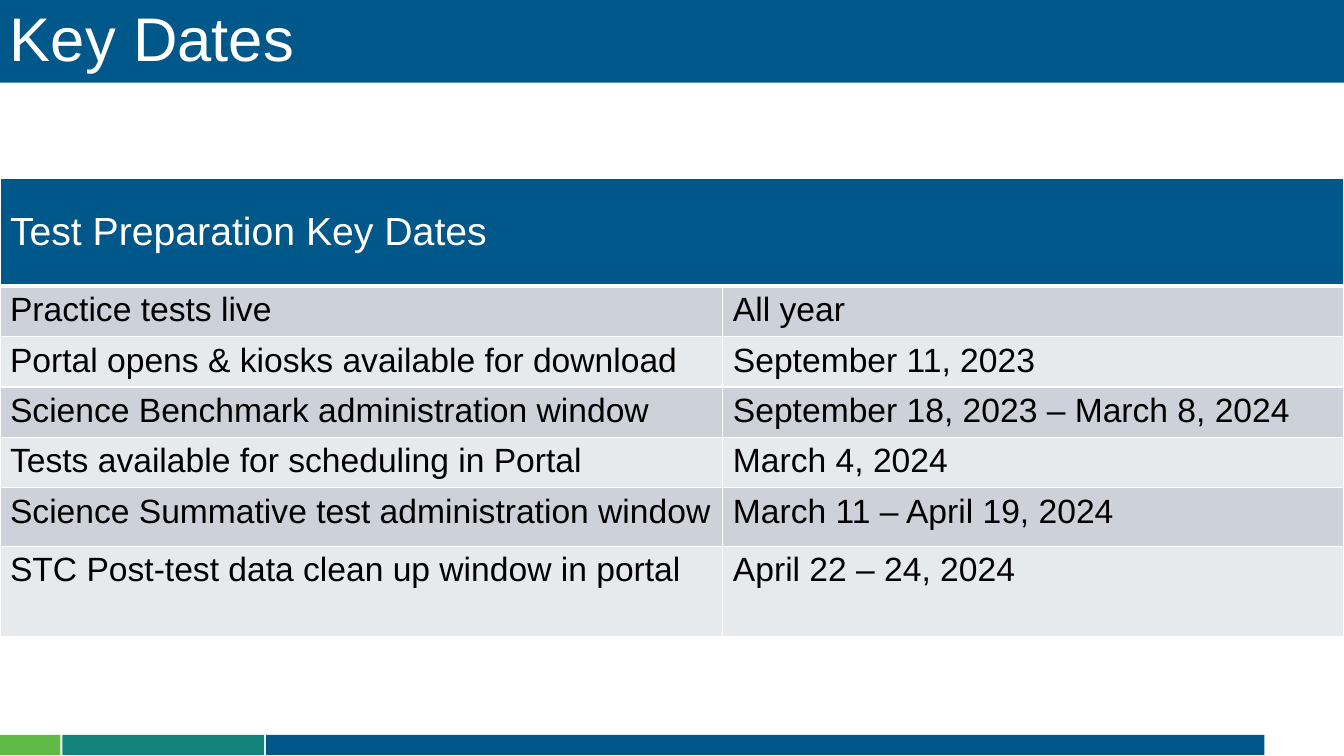
from lxml import etree
from pptx import Presentation
from pptx.dml.color import RGBColor
from pptx.enum.shapes import MSO_SHAPE as Shape
from pptx.enum.text import MSO_ANCHOR as Anchor, PP_ALIGN as Align
from pptx.oxml.ns import qn
from pptx.util import Inches, Pt

FONT = "Arial"
WHITE, BLACK, BLUE = "FFFFFF", "000000", "005789"
BANDS = ("CCD1DA", "E7EAED")
FOOTER_BARS = ((0, 0.6, "60BB46"), (0.62, 2, "128379"), (2.64, 9.9, "005689"))
COLUMN_WIDTHS = (7.17, 6.16)
ROW_HEIGHTS = (1.07, 0.5, 0.5, 0.5, 0.5, 0.58, 0.9)
KEY_DATES = (
    ("Practice tests live", "All year"),
    ("Portal opens & kiosks available for download", "September 11, 2023"),
    ("Science Benchmark administration window", "September 18, 2023 – March 8, 2024"),
    ("Tests available for scheduling in Portal", "March 4, 2024"),
    ("Science Summative test administration window", "March 11 – April 19, 2024"),
    ("STC Post-test data clean up window in portal", "April 22 – 24, 2024"),
)


def color(hex_code):
    return RGBColor.from_string(hex_code)


def add_text(frame, text, size, hex_code):
    para = frame.paragraphs[0]
    para.alignment = Align.LEFT
    span = para.add_run()
    span.text = text
    span.font.name = FONT
    span.font.size = Pt(size)
    span.font.bold = False
    span.font.color.rgb = color(hex_code)
    return para


def add_bar(page, left, top, width, height, hex_code):
    bar = page.shapes.add_shape(
        Shape.RECTANGLE, Inches(left), Inches(top), Inches(width), Inches(height))
    bar.shadow.inherit = False
    bar.fill.solid()
    bar.fill.fore_color.rgb = color(hex_code)
    bar.line.fill.background()
    return bar


def add_title(page, text):
    bar = add_bar(page, 0, 0, 13.33, 0.82, BLUE)
    frame = bar.text_frame
    frame.word_wrap = True
    frame.vertical_anchor = Anchor.MIDDLE
    add_text(frame, text, 44, WHITE).line_spacing = 0.9


def set_borders(cell, top=1, bottom=1):
    """Draw white cell borders; the fill must be set afterwards."""
    properties = cell._tc.get_or_add_tcPr()
    for side, points in (("L", 1), ("R", 1), ("T", top), ("B", bottom)):
        line = etree.SubElement(properties, qn(f"a:ln{side}"), w=str(Pt(points)))
        fill = etree.SubElement(line, qn("a:solidFill"))
        etree.SubElement(fill, qn("a:srgbClr"), val=WHITE)


def fill_cell(cell, hex_code):
    cell.fill.solid()
    cell.fill.fore_color.rgb = color(hex_code)


def add_dates_table(page):
    table = page.shapes.add_table(
        len(ROW_HEIGHTS), len(COLUMN_WIDTHS), Inches(0), Inches(1.77),
        Inches(sum(COLUMN_WIDTHS)), Inches(sum(ROW_HEIGHTS))).table
    for column, width in zip(table.columns, COLUMN_WIDTHS):
        column.width = Inches(width)
    for row, height in zip(table.rows, ROW_HEIGHTS):
        row.height = Inches(height)

    for header in table.rows[0].cells:
        set_borders(header, bottom=3)
        fill_cell(header, BLUE)
    heading = table.cell(0, 0)
    heading.merge(table.cell(0, 1))
    heading.vertical_anchor = Anchor.MIDDLE
    add_text(heading.text_frame, "Test Preparation Key Dates", 28, WHITE)

    for index, entry in enumerate(KEY_DATES):
        for cell, text in zip(table.rows[index + 1].cells, entry):
            set_borders(cell, top=3 if index == 0 else 1)
            fill_cell(cell, BANDS[index % 2])
            add_text(cell.text_frame, text, 24, BLACK)


def main():
    deck = Presentation()
    deck.slide_width = Inches(13.33)
    deck.slide_height = Inches(7.5)
    page = deck.slides.add_slide(deck.slide_layouts[6])
    for left, width, hex_code in FOOTER_BARS:
        add_bar(page, left, 7.29, width, 0.2, hex_code)
    add_title(page, "Key Dates")
    add_dates_table(page)
    deck.save("out.pptx")


if __name__ == "__main__":
    main()
